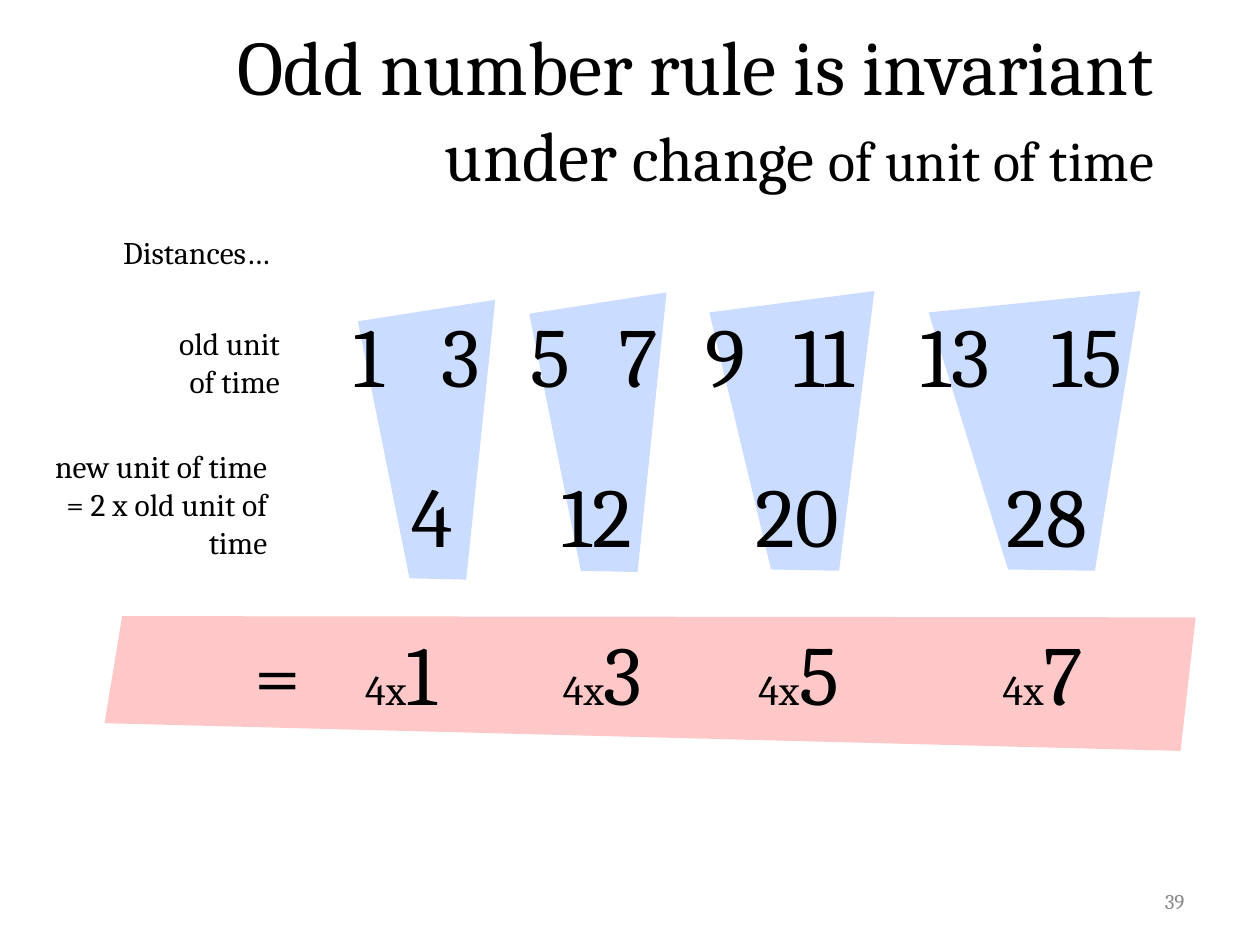
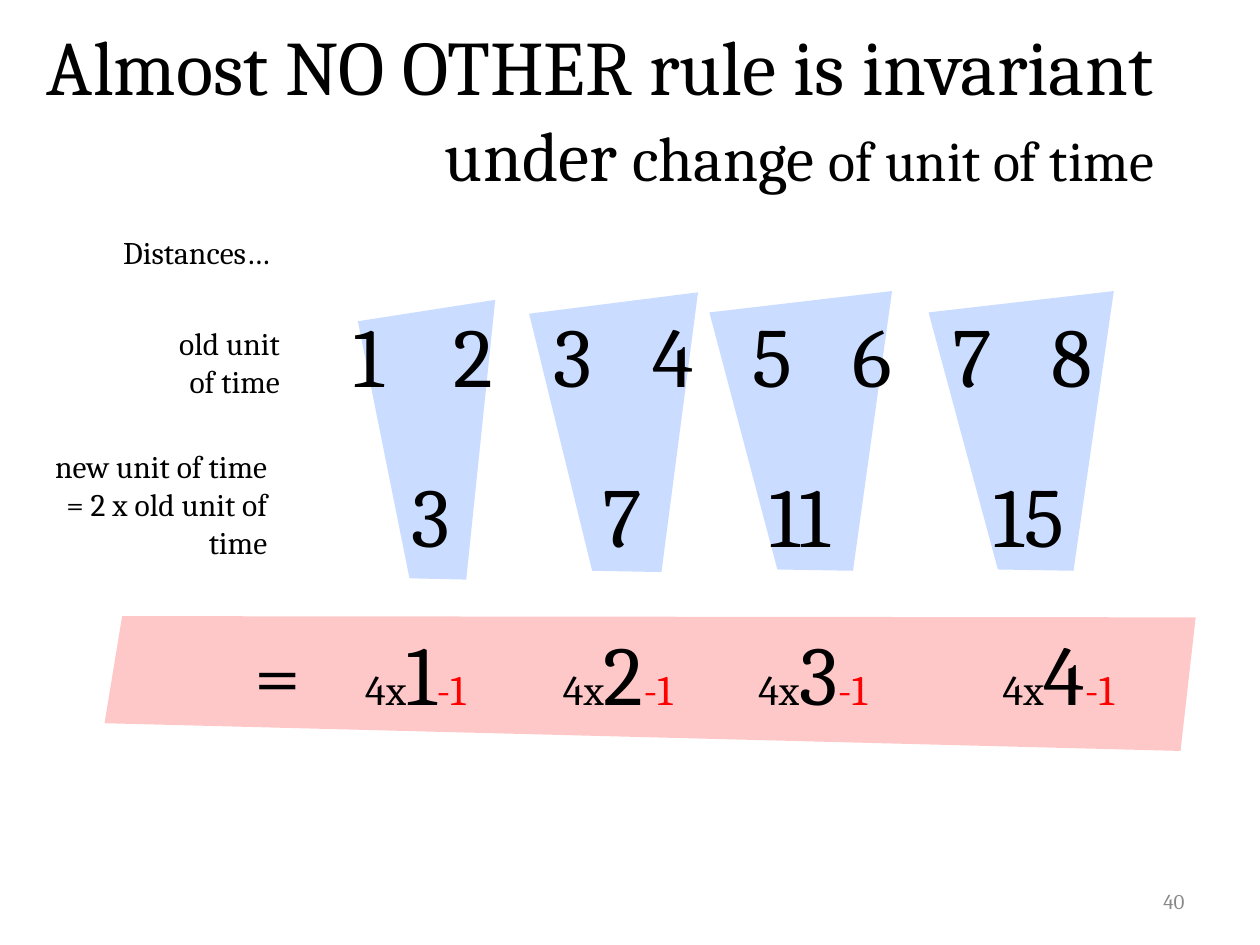
"""Build two slides on which distance rules survive a change of unit of time."""
import dataclasses
import typing

import pptx
import pptx.dml.color
import pptx.enum.text
import pptx.util

Inches = pptx.util.Inches
ALIGN = pptx.enum.text.PP_ALIGN
ANCHOR = pptx.enum.text.MSO_ANCHOR
FIT = pptx.enum.text.MSO_AUTO_SIZE

COLORS = {"ink": "000000", "gray": "898989", "red": "FF0000",
          "blue": "CADCFF", "pink": "FFC8C8"}
FONT = {"name": "Cambria", "bold": False}
FRAME = {"word_wrap": True, "auto_size": FIT.NONE, "vertical_anchor": ANCHOR.TOP}
GROW = {"auto_size": FIT.SHAPE_TO_FIT_TEXT}
LOOSE = GROW | {"word_wrap": False}
MIDDLE = {"vertical_anchor": ANCHOR.MIDDLE}

OLD_TOP, NEW_TOP, SUM_TOP = 2.36, 3.63, 4.88
BIG_TALL = 0.91
SUM_LEFTS = (2.8, 4.37, 5.92, 7.86)
WEDGE_TOPS = (2.38, 2.32, 2.31, 2.31)
BAND = ((0.97, 4.89), (9.49, 4.9), (9.37, 5.96), (0.83, 5.74))


class Run(typing.NamedTuple):
    text: str
    size: float
    color: str = "ink"


class Wedge(typing.NamedTuple):
    left: float
    right: float
    foot_right: float
    foot_left: float


@dataclasses.dataclass
class Note:
    box: tuple
    lines: list
    align: ALIGN = ALIGN.LEFT
    frame: dict = dataclasses.field(default_factory=lambda: LOOSE)


@dataclasses.dataclass
class Page:
    number: str
    head: str
    title_left: float
    wedges: list
    old: dict
    new: dict
    odds: str
    tail: str = ""


SUB = [Run("under ", 40), Run("change ", 36), Run("of unit of time", 32)]
LABELS = [
    Note((0.88, 1.8, 1.44, 0.4), [[Run("Distances…", 18)]]),
    Note((1.21, 2.52, 1.11, 0.71), [[Run("old unit of time", 18)]], ALIGN.RIGHT, GROW),
    Note((0.26, 3.5, 1.96, 1.01),
         [[Run("new unit of time", 18)], [Run("= 2 x old unit of time", 18)]],
         ALIGN.RIGHT, GROW),
    Note((1.92, SUM_TOP, 0.58, BIG_TALL), [[Run("=", 48)]]),
]

PAGES = [
    Page("39", "Odd number rule is invariant", 0.5,
         [Wedge(2.84, 3.93, 3.7, 3.25), Wedge(4.2, 5.29, 5.06, 4.61),
          Wedge(5.63, 6.94, 6.66, 6.12), Wedge(7.37, 9.05, 8.69, 8)],
         {"1": 2.71, "3": 3.41, "5": 4.11, "7": 4.81,
          "9": 5.5, "11": 6.2, "13": 7.21, "15": 8.25},
         {"4": 3.17, "12": 4.36, "20": 5.9, "28": 7.89}, "1357"),
    Page("40", "Almost NO OTHER rule is invariant", 0,
         [Wedge(2.84, 3.93, 3.7, 3.25), Wedge(4.2, 5.54, 5.25, 4.7),
          Wedge(5.63, 7.08, 6.77, 6.17), Wedge(7.37, 8.84, 8.52, 7.92)],
         {str(i + 1): 2.71 + i * (8.25 - 2.71) / 7 for i in range(8)},
         {"3": 3.17, "7": 4.68, "11": 6.01, "15": 7.79}, "1234", "-1"),
]


def rgb(name: str) -> pptx.dml.color.RGBColor:
    return pptx.dml.color.RGBColor.from_string(COLORS[name])


def apply(target, values: dict) -> None:
    for key, value in values.items():
        setattr(target, key, value)


def place(shape, box: tuple) -> None:
    apply(shape, dict(zip(("left", "top", "width", "height"), map(Inches, box))))


def add_runs(para, runs: list) -> None:
    for item in runs:
        run = para.add_run()
        run.text = item.text
        apply(run.font, FONT | {"size": pptx.util.Pt(item.size)})
        run.font.color.rgb = rgb(item.color)


def draw_note(slide, note: Note) -> None:
    frame = slide.shapes.add_textbox(*map(Inches, note.box)).text_frame
    apply(frame, FRAME | note.frame)
    for i, runs in enumerate(note.lines):
        para = frame.add_paragraph() if i else frame.paragraphs[0]
        para.alignment = note.align
        add_runs(para, runs)


def draw_area(slide, points: typing.Sequence, color: str) -> None:
    first, *rest = [(Inches(x), Inches(y)) for x, y in points]
    pen = slide.shapes.build_freeform(*first)
    pen.add_line_segments(rest, close=True)
    area = pen.convert_to_shape()
    area.shadow.inherit = False
    area.fill.solid()
    area.fill.fore_color.rgb = rgb(color)
    area.line.fill.background()


def draw_title(slide, page: Page) -> None:
    title = slide.shapes.title
    place(title, (page.title_left, 0.3, 9.26 - page.title_left, 1.1))
    apply(title.text_frame, FRAME | MIDDLE)
    para = title.text_frame.paragraphs[0]
    para.alignment = ALIGN.RIGHT
    add_runs(para, [Run(page.head, 44)])
    para.add_line_break()
    add_runs(para, SUB)


def draw_row(slide, row: dict, top: float) -> None:
    for text, left in row.items():
        wide = 0.2 + 0.34 * len(text)
        draw_note(slide, Note((left, top, wide, BIG_TALL), [[Run(text, 48)]]))


def draw_sums(slide, page: Page) -> None:
    wide = 1.16 if page.tail else 0.87
    for left, odd in zip(SUM_LEFTS, page.odds):
        runs = [Run("4x", 24), Run(odd, 48)]
        if page.tail:
            runs.append(Run(page.tail, 24, "red"))
        draw_note(slide, Note((left, SUM_TOP, wide, BIG_TALL), [runs]))


def draw_page(deck, page: Page) -> None:
    slide = deck.slides.add_slide(deck.slide_layouts[5])
    for wedge, top in zip(page.wedges, WEDGE_TOPS):
        tops = (top + 0.17, top, top + 2.22, top + 2.21)
        lefts = (wedge.left, wedge.right, wedge.foot_right, wedge.foot_left)
        draw_area(slide, list(zip(lefts, tops)), "blue")
    draw_area(slide, BAND, "pink")
    draw_title(slide, page)
    for note in LABELS:
        draw_note(slide, note)
    draw_row(slide, page.old, OLD_TOP)
    draw_row(slide, page.new, NEW_TOP)
    draw_sums(slide, page)
    draw_note(slide, Note((7.17, 6.95, 2.33, 0.4), [[Run(page.number, 12, "gray")]],
                          ALIGN.RIGHT, MIDDLE))


def main() -> None:
    deck = pptx.Presentation()
    apply(deck, {"slide_width": Inches(10), "slide_height": Inches(7.5)})
    for page in PAGES:
        draw_page(deck, page)
    deck.save("out.pptx")


if __name__ == "__main__":
    main()
